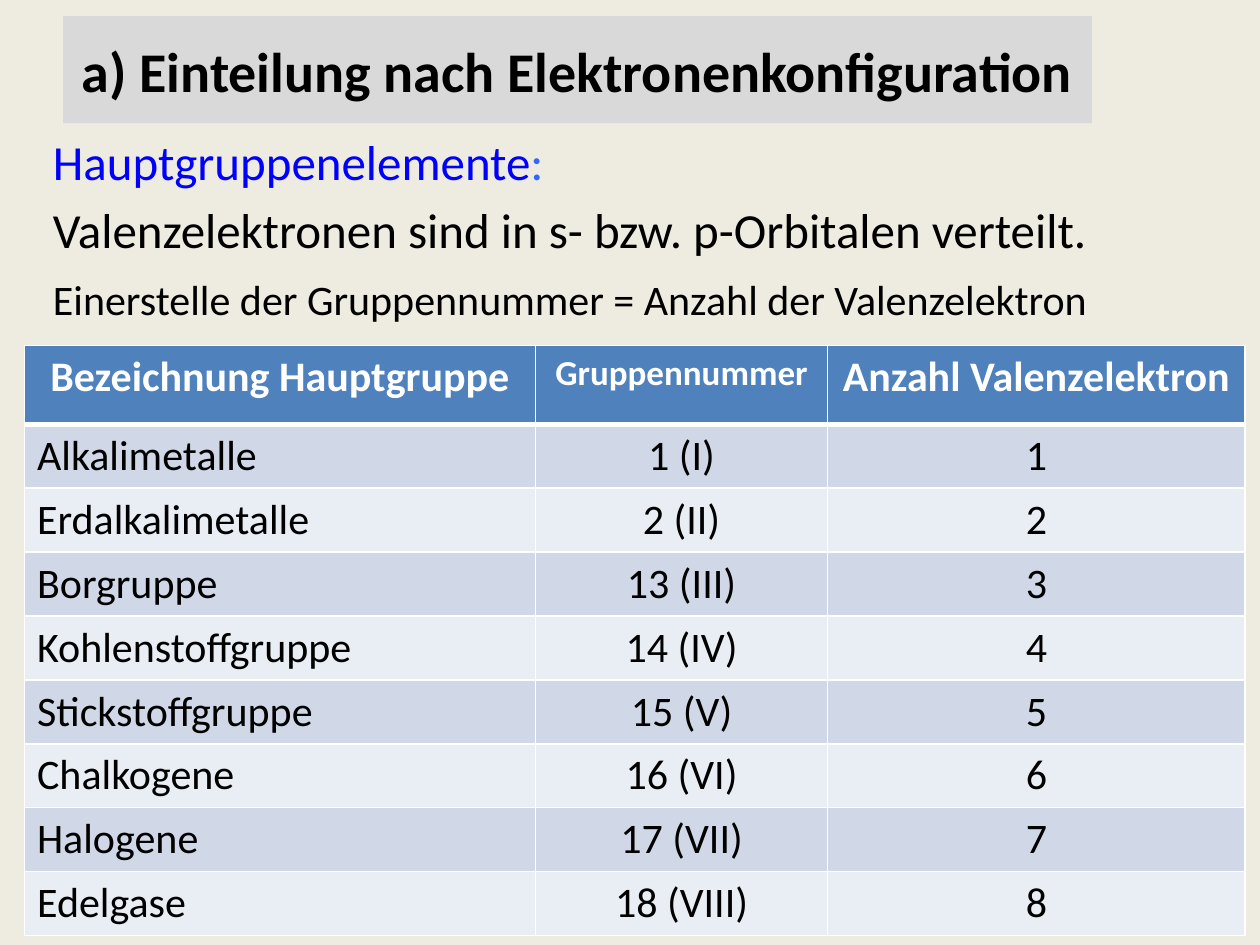
from dataclasses import dataclass

from lxml import etree
from pptx import Presentation
from pptx.dml.color import RGBColor
from pptx.enum.text import MSO_ANCHOR, MSO_AUTO_SIZE, PP_ALIGN
from pptx.oxml.ns import qn
from pptx.util import Pt

LEFT, CENTER = PP_ALIGN.LEFT, PP_ALIGN.CENTER
TOP, MIDDLE = MSO_ANCHOR.TOP, MSO_ANCHOR.MIDDLE
NO_AUTOFIT = MSO_AUTO_SIZE.NONE


@dataclass(frozen=True)
class Theme:
    font: str = "Calibri"
    background: str = "EEECE1"
    title_fill: str = "D9D9D9"
    text: str = "000000"
    heading: str = "0000FF"
    colon: str = "3366FF"
    light: str = "FFFFFF"
    header_fill: str = "4F81BD"
    bands: tuple = ("D0D8E8", "E9EDF4")
    title_size: int = 32
    lead_size: int = 28
    normal_size: int = 24
    small_size: int = 20
    border: int = 1
    header_border: int = 3


class SlideBuilder:
    """Holds the theme and the current slide."""

    def __init__(self, slide, theme):
        self.slide = slide
        self.theme = theme
        self.fill(slide.background, theme.background)

    def fill(self, target, color):
        target.fill.solid()
        target.fill.fore_color.rgb = RGBColor.from_string(color)

    def place(self, shape, left, top, width, height):
        box = {"left": left, "top": top, "width": width, "height": height}
        for name, value in box.items():
            setattr(shape, name, Pt(value))

    def run(self, paragraph, text, size, color, bold=False):
        run = paragraph.add_run()
        run.text = text
        values = {"name": self.theme.font, "size": Pt(size), "bold": bold}
        for name, value in values.items():
            setattr(run.font, name, value)
        run.font.color.rgb = RGBColor.from_string(color)

    def title(self, text, box):
        shape = self.slide.shapes.title
        self.place(shape, *box)
        self.fill(shape, self.theme.title_fill)
        frame = shape.text_frame
        values = {"vertical_anchor": MIDDLE, "auto_size": NO_AUTOFIT, "word_wrap": True}
        for name, value in values.items():
            setattr(frame, name, value)
        paragraph = frame.paragraphs[0]
        paragraph.alignment = CENTER
        self.run(paragraph, text, self.theme.title_size, self.theme.text, bold=True)

    def body(self, lines, box):
        """Each line is its space before and a list of (text, size, color)."""
        shape = self.slide.placeholders[1]
        self.place(shape, *box)
        frame = shape.text_frame
        frame.auto_size = NO_AUTOFIT
        for index, (space_before, runs) in enumerate(lines):
            paragraph = frame.add_paragraph() if index else frame.paragraphs[0]
            paragraph.space_before = Pt(space_before)
            properties = paragraph._p.get_or_add_pPr()
            properties.set("marL", str(Pt(3)))
            properties.set("indent", "0")
            etree.SubElement(properties, qn("a:buNone"))
            for run in runs:
                self.run(paragraph, *run)

    def borders(self, cell, top, bottom):
        properties = cell._tc.get_or_add_tcPr()
        thin = self.theme.border
        sides = {"lnL": thin, "lnR": thin, "lnT": top, "lnB": bottom}
        for index, (side, width) in enumerate(sides.items()):
            line = etree.Element(qn(f"a:{side}"), w=str(Pt(width)))
            solid = etree.SubElement(line, qn("a:solidFill"))
            etree.SubElement(solid, qn("a:srgbClr"), val=self.theme.light)
            properties.insert(index, line)

    def cell(self, cell, text, alignment, size, color, fill, bold=False):
        self.fill(cell, fill)
        cell.vertical_anchor = TOP
        paragraph = cell.text_frame.paragraphs[0]
        paragraph.alignment = alignment
        self.run(paragraph, text, size, color, bold)

    def table(self, headers, rows, left, top, widths, header_height, row_height):
        theme = self.theme
        height = header_height + row_height * len(rows)
        table = self.slide.shapes.add_table(
            len(rows) + 1, len(headers),
            Pt(left), Pt(top), Pt(sum(widths)), Pt(height)).table
        for column, width in zip(table.columns, widths):
            column.width = Pt(width)
        for index, row in enumerate(table.rows):
            row.height = Pt(row_height if index else header_height)

        # Header row
        for column, (text, size) in enumerate(headers):
            cell = table.cell(0, column)
            self.cell(cell, text, CENTER, size, theme.light, theme.header_fill, bold=True)
            self.borders(cell, theme.border, theme.header_border)

        # Banded rows
        for index, values in enumerate(rows):
            band = theme.bands[index % 2]
            upper = theme.border if index else theme.header_border
            for column, text in enumerate(values):
                cell = table.cell(index + 1, column)
                alignment = CENTER if column else LEFT
                self.cell(cell, text, alignment, theme.normal_size, theme.text, band)
                self.borders(cell, upper, theme.border)


def main():
    presentation = Presentation()
    presentation.slide_width, presentation.slide_height = Pt(720), Pt(540)
    slide = presentation.slides.add_slide(presentation.slide_layouts[1])
    theme = Theme()
    builder = SlideBuilder(slide, theme)

    # Title
    builder.title("a) Einteilung nach Elektronenkonfiguration", (36, 9.2, 588, 61.2))

    # Introduction
    builder.body([
        (5.6, [("Hauptgruppenelemente", theme.lead_size, theme.heading),
               (":", theme.lead_size, theme.colon)]),
        (5.6, [("Valenzelektronen sind in s- bzw. p-Orbitalen verteilt.",
                theme.lead_size, theme.text)]),
        (8.5, [("Einerstelle der Gruppennummer = Anzahl der Valenzelektron",
                theme.normal_size, theme.text)]),
    ], (20, 71.3, 686, 124.6))

    # Main groups: the units digit of the group number counts the valence electrons
    groups = [
        ("Alkalimetalle", "1 (I)"),
        ("Erdalkalimetalle", "2 (II)"),
        ("Borgruppe", "13 (III)"),
        ("Kohlenstoffgruppe", "14 (IV)"),
        ("Stickstoffgruppe", "15 (V)"),
        ("Chalkogene", "16 (VI)"),
        ("Halogene", "17 (VII)"),
        ("Edelgase", "18 (VIII)"),
    ]
    rows = [(*group, str(count)) for count, group in enumerate(groups, start=1)]
    headers = [
        ("Bezeichnung Hauptgruppe", theme.normal_size),
        ("Gruppennummer", theme.small_size),
        ("Anzahl Valenzelektron", theme.normal_size),
    ]
    builder.table(headers, rows, left=14, top=197.5, widths=(292, 167, 238.5),
                  header_height=45, row_height=36)

    presentation.save("out.pptx")


if __name__ == "__main__":
    main()
